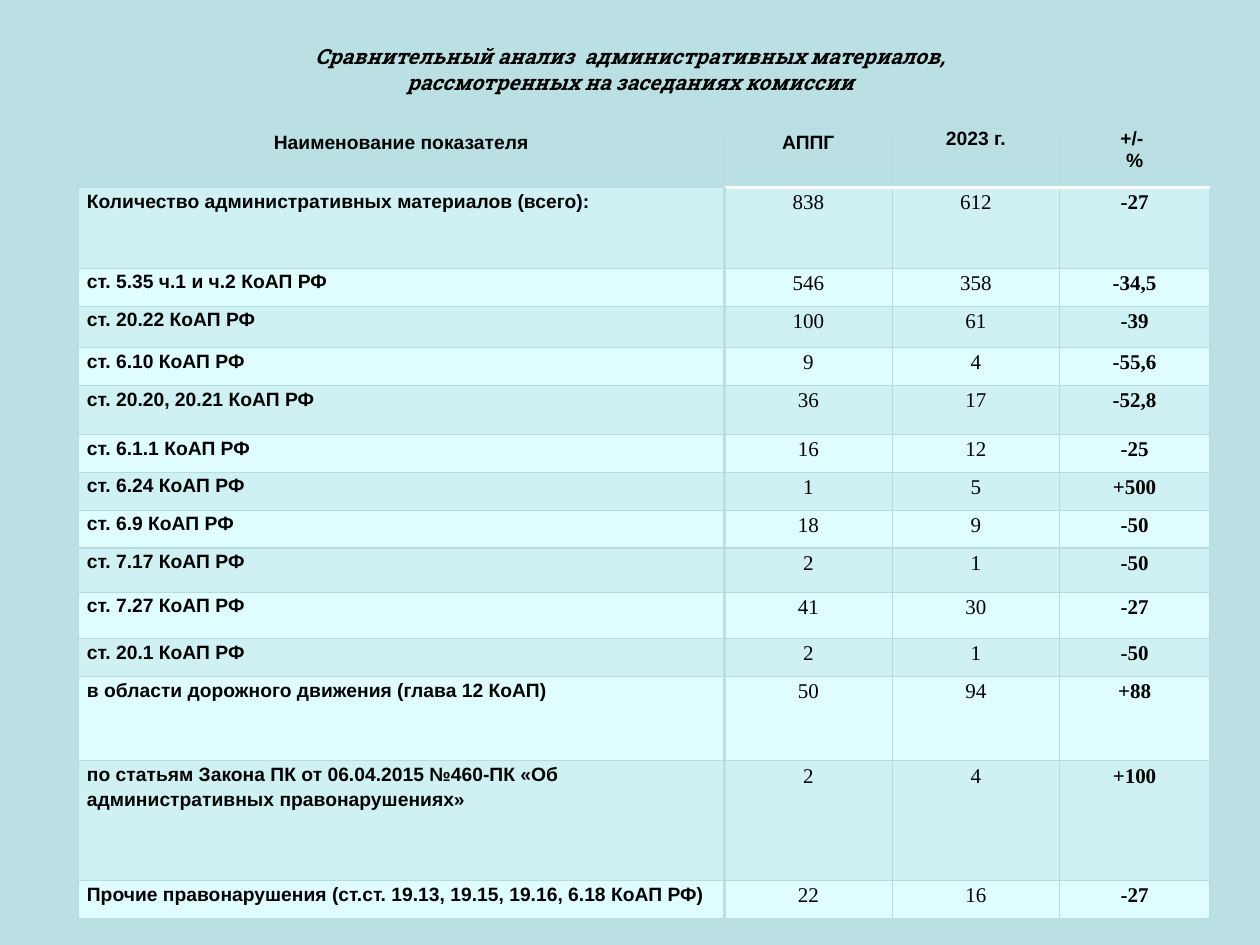
import pptx
import pptx.util
import pptx.dml.color
import pptx.enum.text
import pptx.oxml
import pptx.oxml.ns

Inches, Pt = pptx.util.Inches, pptx.util.Pt
RGBColor = pptx.dml.color.RGBColor
ALIGN = pptx.enum.text.PP_ALIGN

BLACK = RGBColor(0x00, 0x00, 0x00)
WHITE = RGBColor(0xFF, 0xFF, 0xFF)
TEAL = RGBColor(0xBB, 0xE0, 0xE3)
GRID = RGBColor(0xB6, 0xDC, 0xDF)
BAND_DARK = RGBColor(0xD0, 0xF1, 0xF4)
BAND_LIGHT = RGBColor(0xDF, 0xFC, 0xFF)

HEADINGS = ["Наименование показателя", "АППГ", "2023 г.", "+/- \n%"]
# Label, previous year, 2023, change in percent, row height
RECORDS = [
    ("Количество административных материалов (всего):", "838", "612", "-27", 0.64),
    ("ст. 5.35 ч.1 и ч.2 КоАП РФ", "546", "358", "-34,5", 0.3),
    ("ст. 20.22 КоАП РФ", "100", "61", "-39", 0.33),
    ("ст. 6.10 КоАП РФ", "9", "4", "-55,6", 0.3),
    ("ст. 20.20, 20.21 КоАП РФ", "36", "17", "-52,8", 0.39),
    ("ст. 6.1.1 КоАП РФ", "16", "12", "-25", 0.3),
    ("ст. 6.24 КоАП РФ", "1", "5", "+500", 0.3),
    ("ст. 6.9 КоАП РФ", "18", "9", "-50", 0.3),
    ("ст. 7.17 КоАП РФ", "2", "1", "-50", 0.35),
    ("ст. 7.27 КоАП РФ", "41", "30", "-27", 0.37),
    ("ст. 20.1 КоАП РФ", "2", "1", "-50", 0.3),
    ("в области дорожного движения (глава 12 КоАП)", "50", "94", "+88", 0.67),
    ("по статьям Закона ПК от 06.04.2015 №460-ПК «Об административных правонарушениях»",
     "2", "4", "+100", 0.95),
    ("Прочие правонарушения (ст.ст. 19.13, 19.15, 19.16, 6.18 КоАП РФ)",
     "22", "16", "-27", 0.3),
]
COLUMN_WIDTHS = [5.13, 1.33, 1.33, 1.19]
ROW_HEIGHTS = [0.47] + [record[-1] for record in RECORDS]
LEFT_ALIGNED_ROWS = (2, 13)


def style_font(font, name, size, bold=True, italic=False):
    font.name, font.size = name, Pt(size)
    font.bold, font.italic = bold, italic
    font.color.rgb = BLACK


def add_border(cell, side, color, width):
    cell._tc.get_or_add_tcPr().append(pptx.oxml.parse_xml(
        f'<a:ln{side} {pptx.oxml.ns.nsdecls("a")} w="{Pt(width)}"><a:solidFill>'
        f'<a:srgbClr val="{color}"/></a:solidFill></a:ln{side}>'))


presentation = pptx.Presentation()
presentation.slide_width, presentation.slide_height = Inches(10), Inches(7.5)
slide = presentation.slides.add_slide(presentation.slide_layouts[6])
slide.background.fill.solid()
slide.background.fill.fore_color.rgb = TEAL

# Title
title = slide.shapes.add_textbox(Inches(0.55), Inches(0.3), Inches(8.95), Inches(0.79))
title.text_frame.word_wrap = True
title.text_frame.text = ("Сравнительный анализ  административных материалов, \v"
                         "рассмотренных на заседаниях комиссии ")
heading = title.text_frame.paragraphs[0]
heading.alignment = ALIGN.CENTER
for run in heading.runs:
    style_font(run.font, "Roboto Slab", 12, italic=True)

# Table grid
table = slide.shapes.add_table(
    len(ROW_HEIGHTS), len(COLUMN_WIDTHS), Inches(0.62), Inches(1.02),
    Inches(sum(COLUMN_WIDTHS)), Inches(sum(ROW_HEIGHTS))).table
table.first_row = table.horz_banding = False
for column, width in zip(table.columns, COLUMN_WIDTHS):
    column.width = Inches(width)
for row, height in zip(table.rows, ROW_HEIGHTS):
    row.height = Inches(height)

# Cells
for r, values in enumerate([HEADINGS] + [record[:-1] for record in RECORDS]):
    for c, value in enumerate(values):
        cell = table.cell(r, c)
        cell.margin_left = cell.margin_right = Inches(0.07)
        cell.margin_top = cell.margin_bottom = 0

        # Borders: white rule under the header, wide rule after the labels
        borders = {side: (GRID, 0.75) for side in "LRTB"}
        if r and c < 2:
            borders["R" if c == 0 else "L"] = (TEAL, 2)
        if c and r < 2:
            borders["B" if r == 0 else "T"] = (WHITE, 2)
        for side, (color, width) in borders.items():
            add_border(cell, side, color, width)

        cell.fill.solid()
        cell.fill.fore_color.rgb = TEAL if r == 0 else BAND_DARK if r % 2 else BAND_LIGHT

        cell.text_frame.text = value
        for paragraph in cell.text_frame.paragraphs:
            if r or c < 2:
                paragraph.line_spacing = 1.15
                paragraph.space_after = Pt(10)
            if r == 0 or c:
                paragraph.alignment = ALIGN.CENTER
            else:
                paragraph.alignment = ALIGN.LEFT if r in LEFT_ALIGNED_ROWS else ALIGN.JUSTIFY
            for run in paragraph.runs:
                if r and c:
                    style_font(run.font, "Times New Roman", 12, bold=c == 3)
                else:
                    style_font(run.font, "Arial", 11)

presentation.save("out.pptx")
